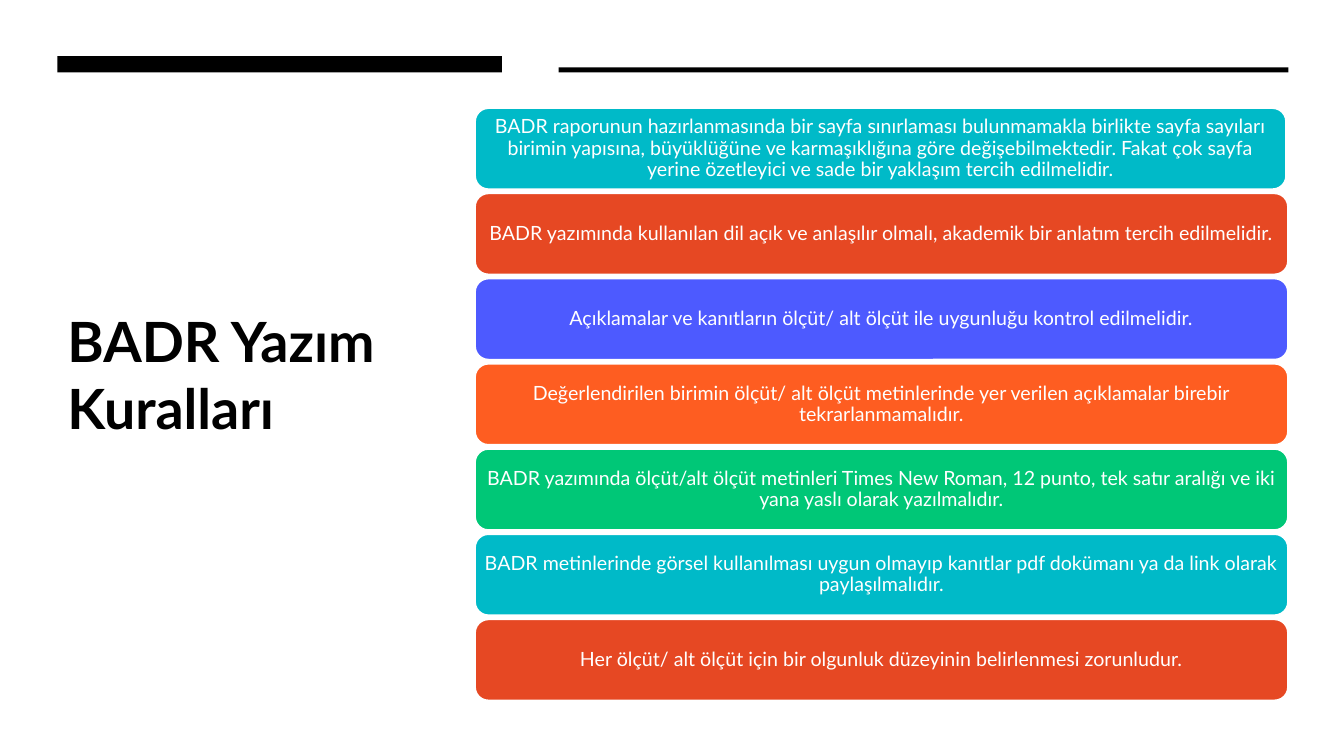
from pptx import Presentation
from pptx.dml.color import RGBColor
from pptx.enum.shapes import MSO_SHAPE
from pptx.enum.text import MSO_ANCHOR, MSO_AUTO_SIZE, PP_ALIGN
from pptx.util import Pt

RECTANGLE = MSO_SHAPE.RECTANGLE
ROUNDED = MSO_SHAPE.ROUNDED_RECTANGLE
TOP, MIDDLE = MSO_ANCHOR.TOP, MSO_ANCHOR.MIDDLE
LEFT, CENTER = PP_ALIGN.LEFT, PP_ALIGN.CENTER
NO_AUTOFIT = MSO_AUTO_SIZE.NONE

WHITE = RGBColor(0xFF, 0xFF, 0xFF)
BLACK = RGBColor(0x00, 0x00, 0x00)
TEAL = RGBColor(0x00, 0xBA, 0xC8)
RED = RGBColor(0xE6, 0x48, 0x23)
BLUE = RGBColor(0x4D, 0x5A, 0xFF)
ORANGE = RGBColor(0xFE, 0x5D, 0x21)
GREEN = RGBColor(0x00, 0xC7, 0x77)

RULES = [
    (TEAL, "BADR raporunun hazırlanmasında bir sayfa sınırlaması bulunmamakla birlikte "
           "sayfa sayıları birimin yapısına, büyüklüğüne ve karmaşıklığına göre "
           "değişebilmektedir. Fakat çok sayfa yerine özetleyici ve sade bir yaklaşım "
           "tercih edilmelidir."),
    (RED, "BADR yazımında kullanılan dil açık ve anlaşılır olmalı, akademik bir anlatım "
          "tercih edilmelidir."),
    (BLUE, "Açıklamalar ve kanıtların ölçüt/ alt ölçüt ile uygunluğu kontrol edilmelidir."),
    (ORANGE, "Değerlendirilen birimin ölçüt/ alt ölçüt metinlerinde yer verilen açıklamalar "
             "birebir tekrarlanmamalıdır."),
    (GREEN, "BADR yazımında ölçüt/alt ölçüt metinleri Times New Roman, 12 punto, tek satır "
            "aralığı ve iki yana yaslı olarak yazılmalıdır."),
    (TEAL, "BADR metinlerinde görsel kullanılması uygun olmayıp kanıtlar pdf dokümanı ya da "
           "link olarak paylaşılmalıdır."),
    (RED, "Her ölçüt/ alt ölçüt için bir olgunluk düzeyinin belirlenmesi zorunludur."),
]


class SlideBuilder:
    """Holds the style and the slide being built."""
    font_name = "Lato"
    title_size = 39.6
    rule_size = 14

    def __init__(self, slide):
        self.slide = slide

    def set_text(self, frame, text, size, color, align, anchor, spacing, insets, bold=False):
        frame.word_wrap = True
        frame.auto_size = NO_AUTOFIT
        frame.vertical_anchor = anchor
        frame.margin_left = frame.margin_right = Pt(insets[0])
        frame.margin_top = frame.margin_bottom = Pt(insets[1])
        paragraph = frame.paragraphs[0]
        paragraph.alignment = align
        paragraph.line_spacing = spacing
        paragraph.space_before = Pt(0)
        run = paragraph.add_run()
        run.text = text
        run.font.name = self.font_name
        run.font.size = Pt(size)
        run.font.bold = bold
        run.font.color.rgb = color

    def title(self, text, left, top, width, height):
        heading = self.slide.shapes.title
        heading.left, heading.top = Pt(left), Pt(top)
        heading.width, heading.height = Pt(width), Pt(height)
        self.set_text(heading.text_frame, text, self.title_size, BLACK, LEFT, TOP,
                      1.0, (7.2, 3.6), bold=True)

    def block(self, kind, fill, left, top, width, height):
        block = self.slide.shapes.add_shape(kind, Pt(left), Pt(top), Pt(width), Pt(height))
        block.shadow.inherit = False
        block.fill.solid()
        block.fill.fore_color.rgb = fill
        block.line.fill.background()
        return block

    def bar(self, left, top, width, height):
        self.block(RECTANGLE, BLACK, left, top, width, height)

    def rule_card(self, text, fill, left, top, width, height):
        card = self.block(ROUNDED, fill, left, top, width, height)
        card.line.color.rgb = WHITE
        card.line.width = Pt(1.5)
        self.set_text(card.text_frame, text, self.rule_size, WHITE, CENTER, MIDDLE,
                      0.9, (4.2, 2.4))


def main():
    deck = Presentation()
    deck.slide_width, deck.slide_height = Pt(960), Pt(540)
    title_only = deck.slide_layouts[5]
    builder = SlideBuilder(deck.slides.add_slide(title_only))

    # Background and title
    background = builder.slide.background.fill
    background.solid()
    background.fore_color.rgb = WHITE
    builder.title("BADR Yazım Kuralları", 41, 216, 258.5, 126)

    # Bars along the top
    builder.bar(41, 40.2, 317.5, 11.5)
    builder.bar(399, 48.2, 521.3, 3.5)

    # Stack of writing rules, the first a little narrower
    first_top, pitch = 77.1, 60.86
    for index, (fill, text) in enumerate(RULES):
        width = 581 if index else 579.6
        builder.rule_card(text, fill, 339.2, first_top + index * pitch, width, 58.2)

    deck.save("out.pptx")


if __name__ == "__main__":
    main()
